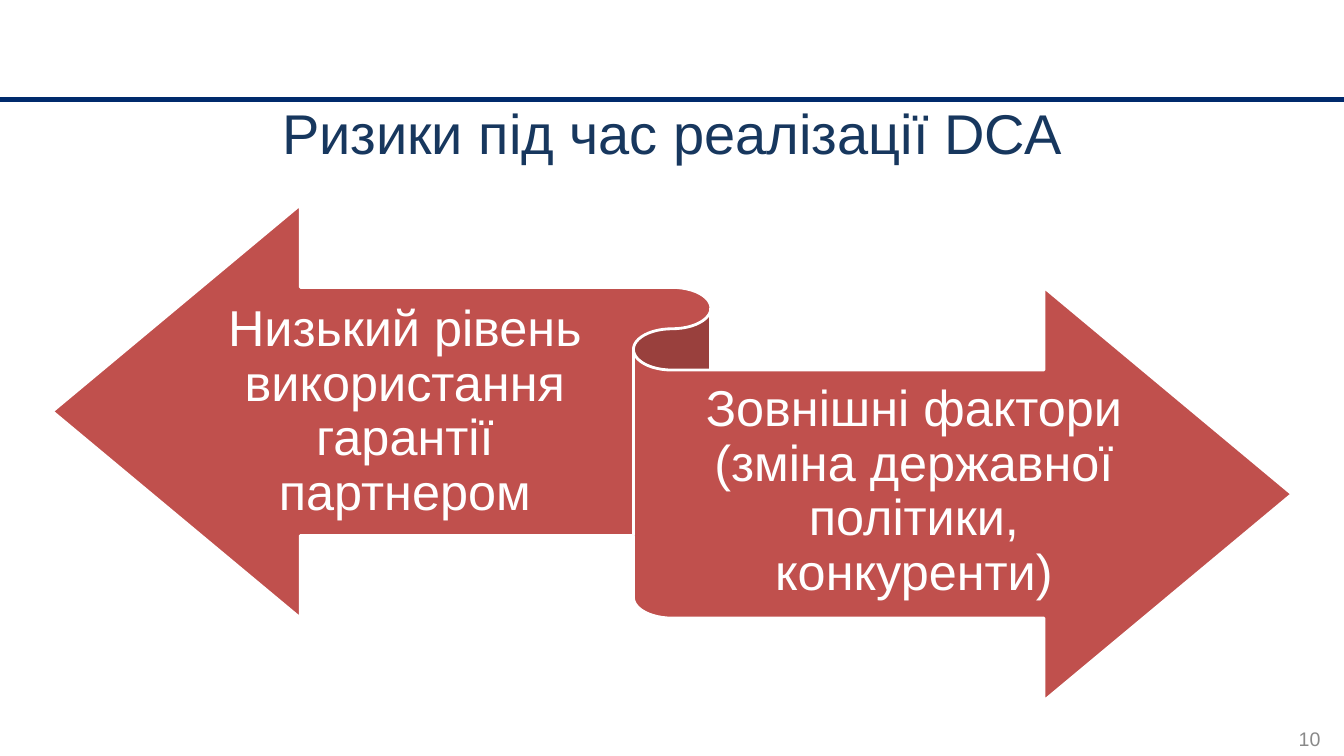
from lxml.etree import SubElement
from pptx import Presentation
from pptx.dml.color import RGBColor
from pptx.enum.shapes import MSO_CONNECTOR, MSO_SHAPE
from pptx.enum.text import MSO_ANCHOR, PP_ALIGN
from pptx.oxml.ns import qn
from pptx.util import Cm, Pt

WIDTH, HEIGHT = 33.87, 19.05
NAVY, TITLE_BLUE, RED, WHITE, GREY = "002A6C", "17375E", "C0504D", "FFFFFF", "898989"


def color(hex_code):
    return RGBColor.from_string(hex_code)


def write(frame, text, size=36, fill=WHITE, align=PP_ALIGN.CENTER, spacing=1.0, insets=None):
    frame.word_wrap = True
    frame.vertical_anchor = MSO_ANCHOR.MIDDLE
    if insets:
        (frame.margin_left, frame.margin_top,
         frame.margin_right, frame.margin_bottom) = map(Cm, insets)
    frame.text = text
    paragraph = frame.paragraphs[0]
    paragraph.alignment = align
    paragraph.line_spacing = spacing
    paragraph.font.name = "Arial"
    paragraph.font.size = Pt(size)
    paragraph.font.color.rgb = color(fill)


class RiskSlide:
    """Holds the current slide and adds styled elements measured in centimetres."""

    def __init__(self, deck):
        self.slide = deck.slides.add_slide(deck.slide_layouts[5])
        self.shapes = self.slide.shapes

    def title(self, text, left, top, width, height):
        heading = self.shapes.title
        heading.left, heading.top = Cm(left), Cm(top)
        heading.width, heading.height = Cm(width), Cm(height)
        write(heading.text_frame, text, size=40, fill=TITLE_BLUE)

    def rule(self, y):
        divider = self.shapes.add_connector(MSO_CONNECTOR.STRAIGHT, 0, Cm(y), Cm(WIDTH), Cm(y))
        divider.line.color.rgb = color(NAVY)
        divider.line.width = Pt(3)
        SubElement(divider.line._get_or_add_ln().getparent(), qn("a:effectLst"))

    def ribbon(self, *box):
        arrows = self.shapes.add_shape(MSO_SHAPE.LEFT_RIGHT_RIBBON, *map(Cm, box))
        arrows.shadow.inherit = False
        arrows.fill.solid()
        arrows.fill.fore_color.rgb = color(RED)
        arrows.line.color.rgb = color(WHITE)
        arrows.line.width = Pt(2)

    def label(self, text, *box, **style):
        write(self.shapes.add_textbox(*map(Cm, box)).text_frame, text, **style)


def main():
    deck = Presentation()
    deck.slide_width, deck.slide_height = Cm(WIDTH), Cm(HEIGHT)
    risks = RiskSlide(deck)
    risks.rule(2.51)
    risks.title("Ризики під час реалізації DCA", 1.7, 2.54, 30.48, 1.57)
    risks.ribbon(1.32, 5.16, 31.24, 12.5)
    arrow_text = {"spacing": 0.9, "insets": (0, 0.36, 0, 0.38)}
    risks.label("Низький рівень використання гарантії партнером",
                5.05, 7.34, 10.31, 6.12, **arrow_text)
    risks.label("Зовнішні фактори (зміна державної політики, конкуренти)",
                16.94, 9.35, 12.19, 6.12, **arrow_text)
    risks.label("10", 25.63, 18.11, 7.9, 1.02, size=14, fill=GREY, align=PP_ALIGN.RIGHT)
    deck.save("out.pptx")


if __name__ == "__main__":
    main()
